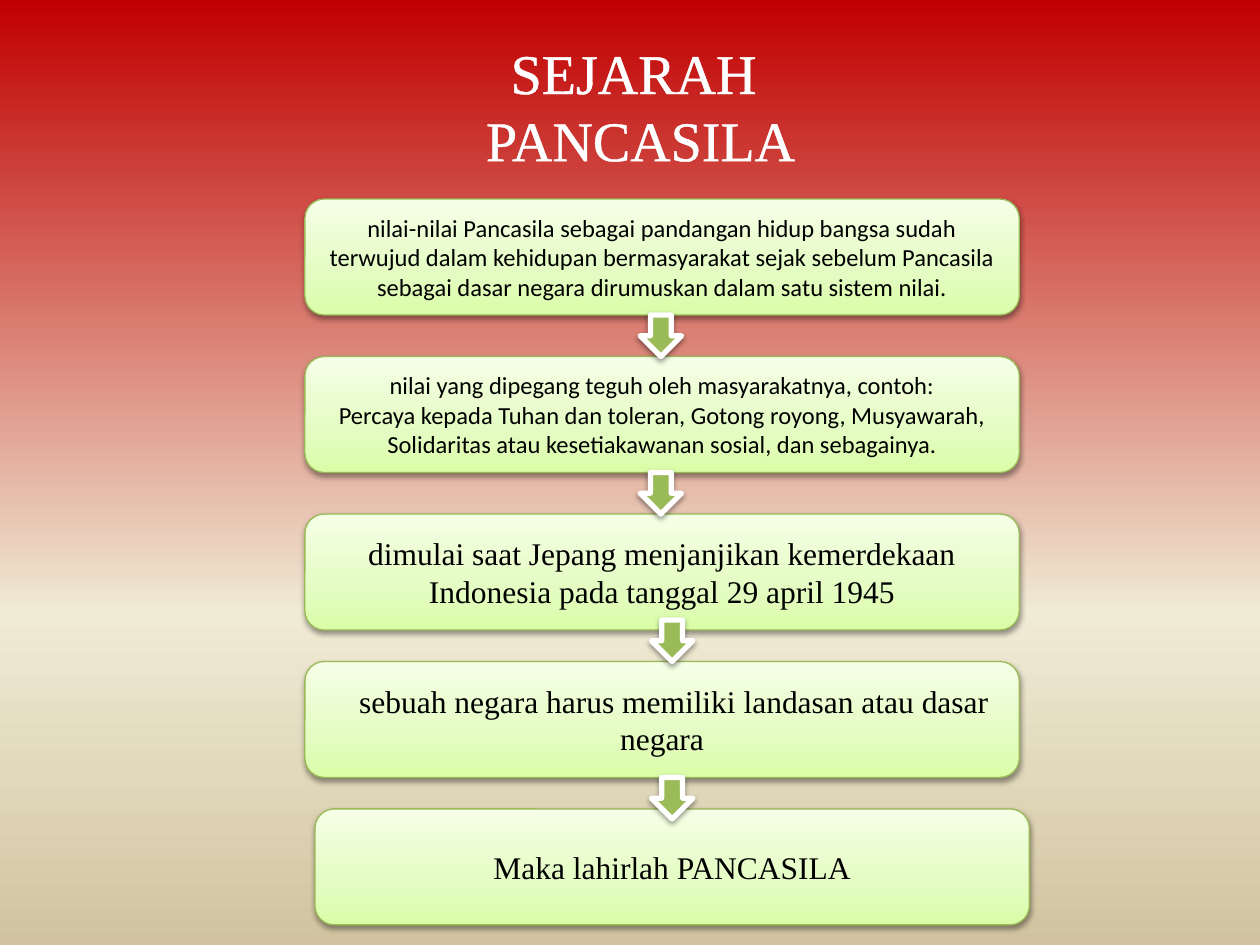
from lxml import etree
from pptx import Presentation
from pptx.dml.color import RGBColor
from pptx.enum.shapes import MSO_SHAPE
from pptx.enum.text import MSO_ANCHOR, PP_ALIGN
from pptx.oxml.ns import qn
from pptx.util import Inches, Pt

ROUNDED, DOWN_ARROW = MSO_SHAPE.ROUNDED_RECTANGLE, MSO_SHAPE.DOWN_ARROW
MIDDLE, CENTER = MSO_ANCHOR.MIDDLE, PP_ALIGN.CENTER
SANS, SERIF = "Calibri", "Times New Roman"

WHITE = RGBColor(0xFF, 0xFF, 0xFF)
BLACK = RGBColor(0x00, 0x00, 0x00)
RED = RGBColor(0xC0, 0x00, 0x00)
CREAM = RGBColor(0xF0, 0xEB, 0xD5)
SAND = RGBColor(0xD1, 0xC3, 0x9F)
GREEN = RGBColor(0x9B, 0xBB, 0x59)
GREEN_EDGE = RGBColor(0x98, 0xB9, 0x55)
LIME = RGBColor(0xDA, 0xFD, 0xA7)
PALE_LIME = RGBColor(0xE4, 0xFC, 0xC2)
MIST = RGBColor(0xF5, 0xFF, 0xE7)

BACKGROUND_STOPS = [(0, RED), (65, CREAM), (100, SAND)]
BOX_STOPS = [(0, LIME), (35, PALE_LIME), (100, MIST)]

BOX_W, BOX_H, ARROW = 5.67, 0.92, 0.33

# left, top, paragraphs, text format
STEPS = [
    (2.42, 1.58,
     ["nilai-nilai Pancasila sebagai pandangan hidup bangsa sudah terwujud "
      "dalam kehidupan bermasyarakat sejak sebelum Pancasila sebagai dasar "
      "negara dirumuskan dalam satu sistem nilai."],
     {"size": 14, "font": SANS}),
    (2.42, 2.83,
     ["nilai yang dipegang teguh oleh masyarakatnya, contoh:",
      "Percaya kepada Tuhan dan toleran, Gotong royong, Musyawarah, "
      "Solidaritas atau kesetiakawanan sosial, dan sebagainya."],
     {"size": 14, "font": SANS}),
    (2.42, 4.08,
     ["dimulai saat Jepang menjanjikan kemerdekaan Indonesia pada tanggal "
      "29 april 1945"],
     {"size": 18, "font": SERIF}),
    (2.42, 5.25,
     ["sebuah negara harus memiliki landasan atau dasar negara"],
     {"size": 18, "font": SERIF, "indent": 0.19}),
    (2.5, 6.42, ["Maka lahirlah PANCASILA"], {"size": 18, "font": SERIF}),
]
ARROWS = [(5.08, 2.5), (5.08, 3.75), (5.17, 4.92), (5.17, 6.17)]


def add_color(parent, color, alpha=None):
    clr = etree.SubElement(parent, qn("a:srgbClr"), val=str(color))
    if alpha is not None:
        etree.SubElement(clr, qn("a:alpha"), val=str(alpha * 1000))


def set_gradient(fill, element, stops, angle):
    """Fill with any number of (percent, colour) stops; angle is anticlockwise."""
    fill.gradient()
    fill.gradient_angle = angle
    stop_list = element.find(".//" + qn("a:gsLst"))
    for old in list(stop_list):
        stop_list.remove(old)
    for percent, color in stops:
        stop = etree.SubElement(stop_list, qn("a:gs"), pos=str(percent * 1000))
        add_color(stop, color)


def add_shadow(sp):
    sp.shadow.inherit = False
    effects = sp.element.spPr.find(qn("a:effectLst"))
    shadow = etree.SubElement(
        effects, qn("a:outerShdw"), blurRad=str(Pt(3.1)), dist=str(Pt(1.6)),
        dir="5400000", rotWithShape="0")
    add_color(shadow, BLACK, alpha=38)


def add_text(tf, lines, *, size, font, color=BLACK, indent=0, outline=None):
    tf.word_wrap = True
    tf.vertical_anchor = MIDDLE
    for i, line in enumerate(lines):
        p = tf.add_paragraph() if i else tf.paragraphs[0]
        p.alignment = CENTER
        if indent:
            p._p.get_or_add_pPr().set("indent", str(Inches(indent)))
        r = p.add_run()
        r.text = line
        r.font.size = Pt(size)
        r.font.name = font
        r.font.color.rgb = color
        if outline:
            ln = etree.Element(qn("a:ln"), w=str(Pt(outline)))
            add_color(etree.SubElement(ln, qn("a:solidFill")), color)
            r._r.get_or_add_rPr().insert(0, ln)


def add_preset(s, kind, left, top, width, height, line, line_width):
    sp = s.shapes.add_shape(kind, Inches(left), Inches(top),
                            Inches(width), Inches(height))
    sp.line.color.rgb = line
    sp.line.width = Pt(line_width)
    add_shadow(sp)
    return sp


def add_title(s):
    title = s.shapes.title
    title.left, title.top = Inches(1.75), Inches(0)
    title.width, title.height = Inches(6.67), Inches(1.67)
    add_text(title.text_frame, ["SEJARAH ", "PANCASILA"], size=32, font=SERIF,
             color=WHITE, outline=1.45)


def add_step(s, left, top, lines, text_format):
    sp = add_preset(s, ROUNDED, left, top, BOX_W, BOX_H, GREEN_EDGE, 0.75)
    set_gradient(sp.fill, sp.element, BOX_STOPS, 90)
    add_text(sp.text_frame, lines, **text_format)


def add_arrow(s, left, top):
    sp = add_preset(s, DOWN_ARROW, left, top, ARROW, ARROW, WHITE, 3)
    sp.fill.solid()
    sp.fill.fore_color.rgb = GREEN


def main():
    prs = Presentation()
    prs.slide_width, prs.slide_height = Inches(10), Inches(7.5)
    s = prs.slides.add_slide(prs.slide_layouts[5])
    set_gradient(s.background.fill, s.element, BACKGROUND_STOPS, 270)
    add_title(s)
    for step in STEPS:
        add_step(s, *step)
    for left, top in ARROWS:
        add_arrow(s, left, top)
    prs.save("out.pptx")


if __name__ == "__main__":
    main()
